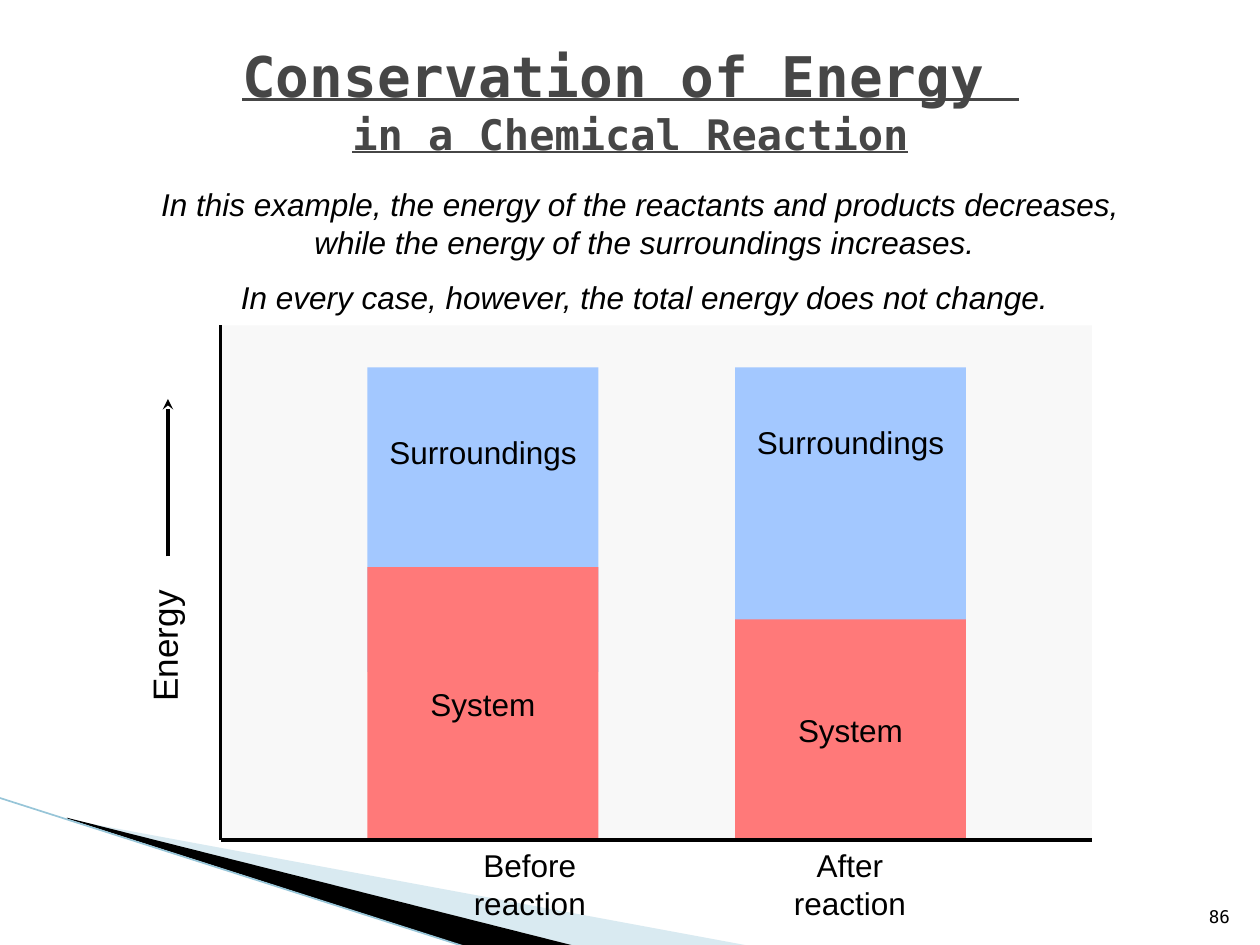
from pptx import Presentation
from pptx.dml.color import RGBColor
from pptx.enum.shapes import MSO_CONNECTOR, MSO_SHAPE
from pptx.enum.text import MSO_ANCHOR, PP_ALIGN
from pptx.oxml.ns import qn
from pptx.util import Pt
from lxml import etree

STRAIGHT = MSO_CONNECTOR.STRAIGHT
RECTANGLE = MSO_SHAPE.RECTANGLE
TOP, MIDDLE, BOTTOM = MSO_ANCHOR.TOP, MSO_ANCHOR.MIDDLE, MSO_ANCHOR.BOTTOM
LEFT, CENTER, RIGHT = PP_ALIGN.LEFT, PP_ALIGN.CENTER, PP_ALIGN.RIGHT
SANS, MONO = "Arial", "DejaVu Sans Mono"
COLORS = {
    "text": "000000",
    "title": "464646",
    "plot": "F8F8F8",
    "surroundings": "A3C8FF",
    "system": "FF7979",
    "pale_wedge": "A0CBDC",
    "dark_wedge": "000000",
    "edge": "97C5D8",
    "axis": "000000",
}
AXIS_LEFT, AXIS_RIGHT, AXIS_TOP, BASELINE = 126, 624, 186, 480
BAR_TOP, BAR_WIDTH = 210, 132
BARS = [
    {"left": 210, "split": 324, "depth": 174, "inset": 37.4},
    {"left": 420, "split": 354, "depth": 270, "inset": 31.7},
]


def color(name):
    """Return the named colour."""
    return RGBColor.from_string(COLORS[name])


def write_text(shape, lines, size=18, font=SANS, ink="text", align=CENTER, anchor=TOP,
               wrap=False, bold=None, italic=None, underline=None, gaps=(), inset=3.6):
    """Write one paragraph per line, with optional space before by line index."""
    frame = shape.text_frame
    frame.word_wrap = wrap
    frame.vertical_anchor = anchor
    frame.margin_top = Pt(inset)
    for index, line in enumerate(lines):
        paragraph = frame.paragraphs[0] if index == 0 else frame.add_paragraph()
        paragraph.alignment = align
        if index in gaps:
            paragraph.space_before = Pt(gaps[index])
        run = paragraph.add_run()
        run.text = line
        run.font.name, run.font.size = font, Pt(size)
        run.font.bold, run.font.italic, run.font.underline = bold, italic, underline
        run.font.color.rgb = color(ink)


def add_label(slide, box, lines, **text_format):
    """Add a text box and return it."""
    shape = slide.shapes.add_textbox(*map(Pt, box))
    write_text(shape, lines, **text_format)
    return shape


def paint(shape, fill):
    """Give a shape a plain fill without line or shadow."""
    shape.shadow.inherit = False
    shape.fill.solid()
    shape.fill.fore_color.rgb = color(fill)
    shape.line.fill.background()


def add_block(slide, box, fill):
    """Add a plain rectangle and return it."""
    shape = slide.shapes.add_shape(RECTANGLE, *map(Pt, box))
    paint(shape, fill)
    return shape


def add_wedge(slide, points, fill, opacity=100):
    """Add a filled outline through the points."""
    start, *others = [(Pt(x), Pt(y)) for x, y in points]
    builder = slide.shapes.build_freeform(*start)
    builder.add_line_segments(others)
    shape = builder.convert_to_shape()
    paint(shape, fill)
    if opacity < 100:
        tint = shape.fill._xPr.find(f".//{qn('a:srgbClr')}")
        etree.SubElement(tint, qn("a:alpha"), val=str(opacity * 1000))


def add_line(slide, start, end, ink="axis", width=2, arrow=False):
    """Add a straight line, with an arrowhead at its end if wanted."""
    line = slide.shapes.add_connector(STRAIGHT, *map(Pt, (*start, *end)))
    line.line.color.rgb = color(ink)
    line.line.width = Pt(width)
    if arrow:
        etree.SubElement(line.line._get_or_add_ln(), qn("a:tailEnd"), type="stealth")
    etree.SubElement(line._element.spPr, qn("a:effectLst"))


def add_bar(slide, left, split, depth, inset):
    """Add one stacked energy bar."""
    surroundings = add_block(slide, (left, BAR_TOP, BAR_WIDTH, depth), "surroundings")
    write_text(surroundings, ["Surroundings"], inset=inset)
    system = add_block(slide, (left, split, BAR_WIDTH, BASELINE - split), "system")
    write_text(system, ["System"], anchor=MIDDLE)


def add_decoration(slide):
    """Add the wedges in the lower left corner."""
    add_wedge(slide, [(39.6, 468.5), (428.4, 540.5), (328.3, 540.5), (39.6, 468)],
              "pale_wedge", opacity=40)
    add_wedge(slide, [(38.2, 467.3), (329, 540.7), (267.8, 541.4), (38.9, 468)], "dark_wedge")
    add_line(slide, (-0.7, 455.8), (267.1, 541.4), ink="edge", width=0.95)


def add_heading(slide):
    """Add the two-size title and the explanation below it."""
    title = add_label(slide, (12.2, 12.2, 696.2, 90), ["Conservation of Energy "], size=32,
                      font=MONO, ink="title", anchor=MIDDLE, wrap=True, bold=True, underline=True)
    paragraph = title.text_frame.paragraphs[0]
    paragraph.add_line_break()
    run = paragraph.add_run()
    run.text = "in a Chemical Reaction"
    run.font.name, run.font.size = MONO, Pt(24)
    run.font.bold = run.font.underline = True
    run.font.color.rgb = color("title")
    add_label(slide, (85, 102.2, 566.6, 82), [
        "In this example, the energy of the reactants and products decreases, ",
        "while the energy of the surroundings increases.",
        "In every case, however, the total energy does not change.",
    ], italic=True, gaps={2: 10})


def add_diagram(slide):
    """Add the energy diagram with its bars, axes and labels."""
    add_block(slide, (AXIS_LEFT, AXIS_TOP, AXIS_RIGHT - AXIS_LEFT, BASELINE - AXIS_TOP), "plot")
    add_line(slide, (AXIS_LEFT, BASELINE), (AXIS_LEFT, AXIS_TOP))
    for bar in BARS:
        add_bar(slide, **bar)
    energy = add_label(slide, (54.7, 353.5, 77.8, 31), ["Energy"], size=20, align=LEFT)
    energy.rotation = 270
    add_line(slide, (96, 318), (96, 228), arrow=True)
    for left, moment in ((263.5, "Before"), (446.4, "After")):
        add_label(slide, (left, BASELINE, 78.5, 50.4), [moment, "reaction"])
    add_line(slide, (AXIS_LEFT, BASELINE), (AXIS_RIGHT, BASELINE))


def main():
    """Build and save the slide."""
    presentation = Presentation()
    presentation.slide_width, presentation.slide_height = Pt(720), Pt(540)
    slide = presentation.slides.add_slide(presentation.slide_layouts[6])
    add_decoration(slide)
    add_heading(slide)
    add_diagram(slide)
    add_label(slide, (681.1, 504.7, 28.8, 28.8), ["86"], size=10, font=MONO,
              align=RIGHT, anchor=BOTTOM, wrap=True)
    presentation.save("out.pptx")


if __name__ == "__main__":
    main()
